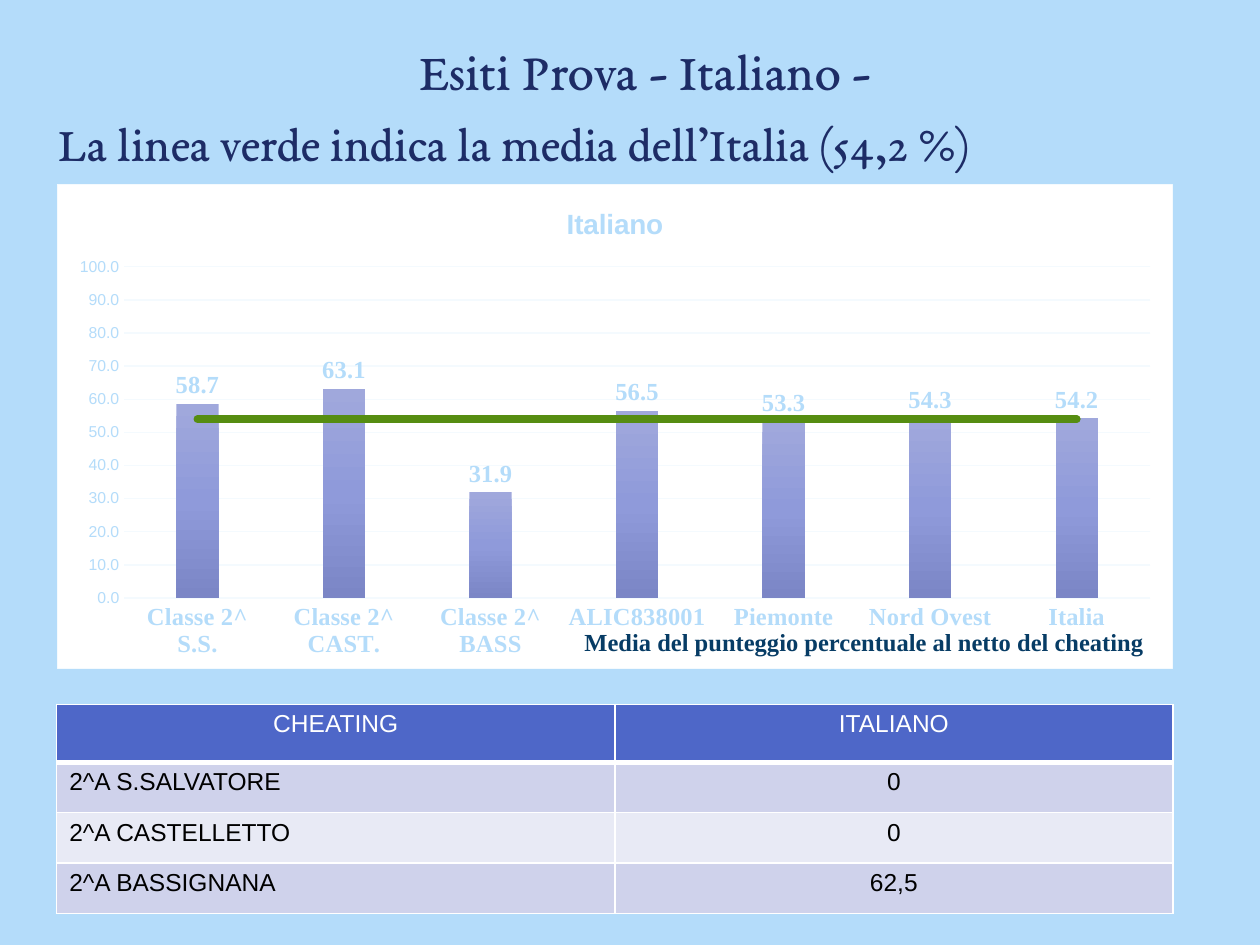
import pptx
import pptx.chart.data
import pptx.dml.color
import pptx.enum.chart
import pptx.enum.text
import pptx.oxml
import pptx.oxml.ns
import pptx.util

Pt = pptx.util.Pt
ALIGN = pptx.enum.text.PP_ALIGN
COLORS = {
    "background": "B4DCFA", "heading": "1D2C66", "caption": "073C65",
    "pale": "B4DCFA", "grid": "F4FAFE", "white": "FFFFFF", "black": "000000",
    "average": "568D11", "header": "4E67C8", "band1": "CFD2EB", "band2": "E8EAF5",
    "bar_top": "A0A8DC", "bar_mid": "8F9ADA", "bar_end": "7B86C6",
}
SCORES = {
    "Classe 2^ S.S.": 58.7, "Classe 2^ CAST.": 63.1, "Classe 2^ BASS": 31.9,
    "ALIC838001": 56.5, "Piemonte": 53.3, "Nord Ovest": 54.3, "Italia": 54.2,
}
AVERAGE = 54
CHEATING = [
    ("CHEATING", "ITALIANO"), ("2^A S.SALVATORE", "0"),
    ("2^A CASTELLETTO", "0"), ("2^A BASSIGNANA", "62,5"),
]


def rgb(name):
    return pptx.dml.color.RGBColor.from_string(COLORS[name])


def xml(tag, body, attrs=""):
    ns = pptx.oxml.ns.nsdecls("a", "c")
    return pptx.oxml.parse_xml(f"<{tag} {ns} {attrs}>{body}</{tag}>")


def solid(name):
    return f'<a:solidFill><a:srgbClr val="{COLORS[name]}"/></a:solidFill>'


def set_font(font, name, size, color, bold=False):
    formats = {"name": name, "size": Pt(size), "bold": bold}
    for key, value in formats.items():
        setattr(font, key, value)
    font.color.rgb = rgb(color)


def write(tf, text, align, *font):
    p = tf.paragraphs[0]
    p.alignment = align
    r = p.add_run()
    r.text = text
    set_font(r.font, *font)
    return p


def place_text(sp, box, inset, text, align, *font):
    for key, value in zip(("left", "top", "width", "height"), box):
        setattr(sp, key, Pt(value))
    tf = sp.text_frame
    formats = {
        "word_wrap": True, "auto_size": pptx.enum.text.MSO_AUTO_SIZE.NONE,
        "vertical_anchor": pptx.enum.text.MSO_ANCHOR.TOP,
        "margin_top": Pt(inset), "margin_bottom": Pt(inset),
    }
    for key, value in formats.items():
        setattr(tf, key, value)
    return write(tf, text, align, *font)


def add_headings(s, x, y):
    title, body = s.placeholders
    place_text(title, (x + 27.4, y, 657.4, 43.9), 3.6, "Esiti Prova - Italiano -",
               ALIGN.CENTER, "EB Garamond", 30, "heading")
    p = place_text(body, (x, y + 38.9, 561.6, 48.2), 7.2,
                   "La linea verde indica la media dell’Italia (54,2 %)",
                   ALIGN.CENTER, "EB Garamond", 28, "heading")
    p.space_before = Pt(0)
    pPr = p._p.get_or_add_pPr()
    pPr.set("marL", "0")
    pPr.set("indent", "0")
    pPr.append(xml("a:buNone", ""))


def format_axes(chart):
    none = pptx.enum.chart.XL_TICK_MARK.NONE
    cat, val = chart.category_axis, chart.value_axis
    for axis in (cat, val):
        axis.major_tick_mark = axis.minor_tick_mark = none
    set_font(cat.tick_labels.font, "Times New Roman", 14, "pale", True)
    set_font(val.tick_labels.font, "Arial", 9, "pale")
    for line in (cat.format.line, val.major_gridlines.format.line):
        line.color.rgb = rgb("grid")
        line.width = Pt(0.75)
    val.format.line.fill.background()
    val.minimum_scale, val.maximum_scale, val.major_unit = 0, 100, 10
    val.tick_labels.number_format = "0.0"
    val.tick_labels.number_format_is_linked = False


def format_bars(plot):
    plot.gap_width = 247
    plot.vary_by_categories = False
    series = plot.series[0]
    stops = "".join(
        f'<a:gs pos="{pos}"><a:srgbClr val="{COLORS[name]}"/></a:gs>'
        for pos, name in ((0, "bar_top"), (50000, "bar_mid"), (100000, "bar_end")))
    series.format.fill.background()
    spPr = series._element.spPr
    spPr.replace(spPr[0], xml("a:gradFill", f"<a:gsLst>{stops}</a:gsLst>"
                              '<a:lin ang="5400000" scaled="0"/>'))
    labels = series.data_labels
    formats = {
        "show_value": True, "number_format": "0.0", "number_format_is_linked": False,
        "position": pptx.enum.chart.XL_LABEL_POSITION.OUTSIDE_END,
    }
    for key, value in formats.items():
        setattr(labels, key, value)
    set_font(labels.font, "Times New Roman", 14, "pale", True)


def add_average_line(chart):
    """Move the second series from the bars to a line plot on the same axes."""
    bars = chart.plots[0]._element
    ser = bars.findall(pptx.oxml.ns.qn("c:ser"))[1]
    for child in ser.findall(pptx.oxml.ns.qn("c:invertIfNegative")):
        ser.remove(child)
    line_plot = xml("c:lineChart", '<c:grouping val="standard"/><c:varyColors val="0"/>')
    line_plot.append(ser)
    line_plot.append(xml("c:marker", "", 'val="1"'))
    for axis in bars.findall(pptx.oxml.ns.qn("c:axId")):
        line_plot.append(xml("c:axId", "", f'val="{axis.get("val")}"'))
    bars.addnext(line_plot)
    series = chart.plots[1].series[0]
    series.smooth = False
    series.marker.style = pptx.enum.chart.XL_MARKER_STYLE.NONE
    line = series.format.line
    line.color.rgb = rgb("average")
    line.width = Pt(4.5)
    series._element.spPr.find(pptx.oxml.ns.qn("a:ln")).set("cap", "rnd")


def add_score_chart(s, x, y, w, h):
    data = pptx.chart.data.CategoryChartData(number_format="0.0")
    data.categories = list(SCORES)
    data.add_series("Italiano", list(SCORES.values()))
    data.add_series("Media Italia", [AVERAGE] * len(SCORES))
    kind = pptx.enum.chart.XL_CHART_TYPE.COLUMN_CLUSTERED
    chart = s.shapes.add_chart(kind, Pt(x), Pt(y), Pt(w), Pt(h), data).chart
    set_font(chart.font, "Arial", 10, "black")
    chart.has_legend = False
    chart.has_title = True
    write(chart.chart_title.text_frame, "Italiano", None, "Arial", 16, "pale", True)
    chart.chart_title.include_in_layout = False
    format_axes(chart)
    add_average_line(chart)
    format_bars(chart.plots[0])

    root = chart._chartSpace.chart
    root.addnext(xml("c:spPr", f'{solid("white")}<a:ln w="9525">{solid("grid")}</a:ln>'))
    area = root.plotArea
    for old in area.findall(pptx.oxml.ns.qn("c:layout")):
        area.remove(old)
    frame = "".join(f'<c:{key} val="{value}"/>' for key, value in (
        ("layoutTarget", "inner"), ("xMode", "edge"), ("yMode", "edge"),
        ("x", 0.06), ("y", 0.17), ("w", 0.92), ("h", 0.685)))
    area.insert(0, xml("c:layout", f"<c:manualLayout>{frame}</c:manualLayout>"))

    caption = s.shapes.add_textbox(0, 0, 0, 0)
    place_text(caption, (x + 116.6, y + 249.9, 512, 25.9), 3.6,
               "Media del punteggio percentuale al netto del cheating",
               ALIGN.RIGHT, "Times New Roman", 14, "caption", True)


def add_cheating_table(s, x, y, w, h):
    header_h = 33.1
    row_h = (h - header_h) / (len(CHEATING) - 1)
    table = s.shapes.add_table(len(CHEATING), 2, Pt(x), Pt(y), Pt(w), Pt(h)).table
    for column in table.columns:
        column.width = Pt(w / 2)
    for i, texts in enumerate(CHEATING):
        table.rows[i].height = Pt(row_h if i else header_h)
        fill = ("band1" if i % 2 else "band2") if i else "header"
        for j, text in enumerate(texts):
            cell = table.cell(i, j)
            align = ALIGN.LEFT if i and j == 0 else ALIGN.CENTER
            write(cell.text_frame, text, align, "Arial", 14, "black" if i else "white")
            tcPr = cell._tc.get_or_add_tcPr()
            widths = {"L": 1, "R": 1, "T": 3 if i == 1 else 1, "B": 1 if i else 3}
            for side, width in widths.items():
                tcPr.append(xml(f"a:ln{side}", solid("white"), f'w="{Pt(width)}"'))
            cell.fill.solid()
            cell.fill.fore_color.rgb = rgb(fill)


def main():
    prs = pptx.Presentation()
    prs.slide_width, prs.slide_height = Pt(720), Pt(540)
    s = prs.slides.add_slide(prs.slide_layouts[1])
    s.background.fill.solid()
    s.background.fill.fore_color.rgb = rgb("background")
    add_headings(s, 13, 18)
    add_score_chart(s, 32.4, 105.1, 637.9, 277.2)
    add_cheating_table(s, 32.4, 402.5, 637.9, 119.5)
    prs.save("out.pptx")


if __name__ == "__main__":
    main()
